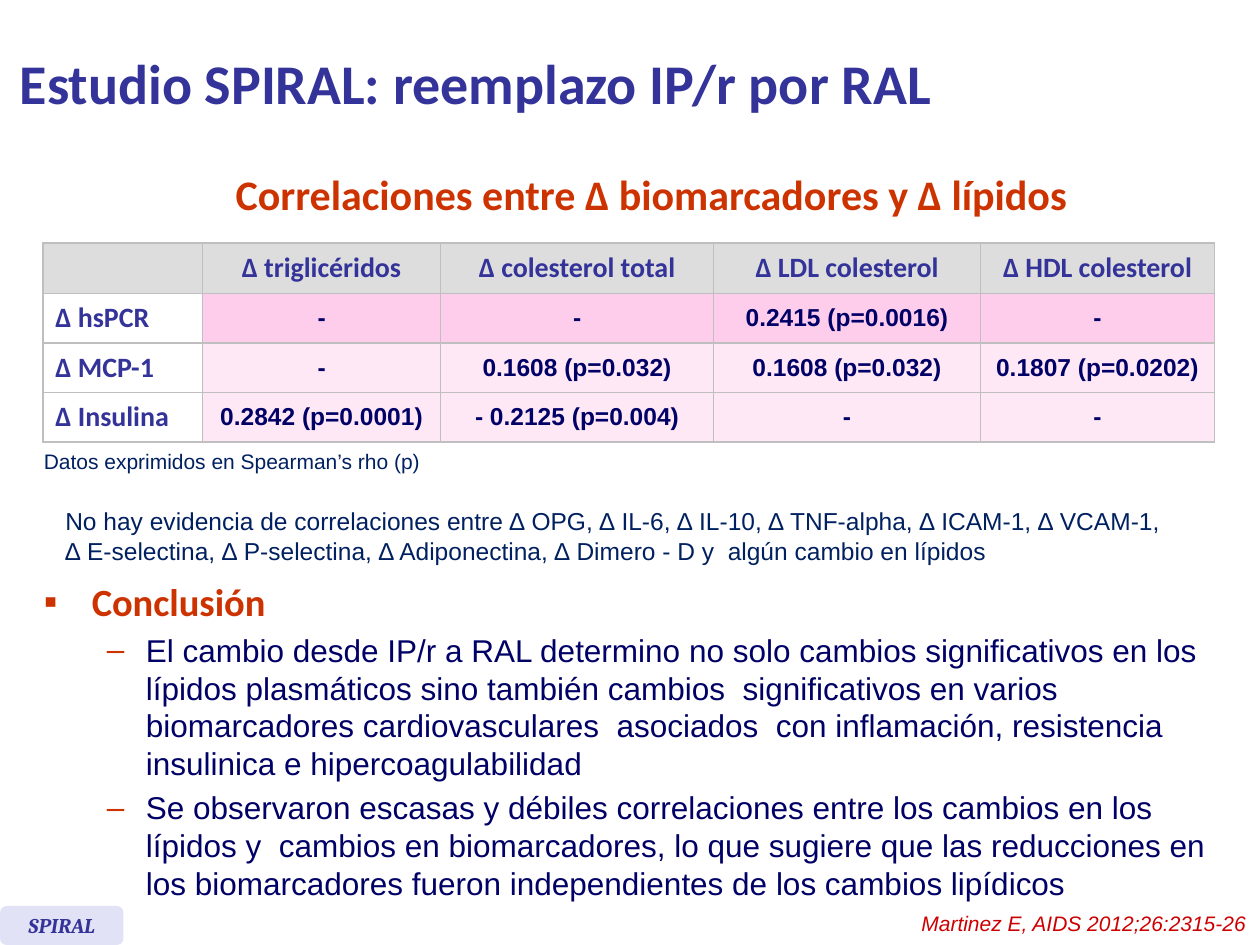
from lxml.etree import SubElement
from pptx import Presentation
from pptx.dml.color import RGBColor
from pptx.enum.shapes import MSO_SHAPE
from pptx.enum.text import MSO_ANCHOR, PP_ALIGN
from pptx.oxml.ns import qn
from pptx.util import Inches, Pt

INDIGO = RGBColor(0x33, 0x33, 0x99)
NAVY = RGBColor(0x00, 0x00, 0x66)
DEEP_BLUE = RGBColor(0x00, 0x20, 0x60)
RUST = RGBColor(0xCC, 0x33, 0x00)
RED = RGBColor(0xCC, 0x00, 0x00)
LAVENDER = RGBColor(0xE2, 0xE2, 0xF6)
GREY = RGBColor(0xDD, 0xDD, 0xDD)
BORDER_GREY = RGBColor(0xBF, 0xBF, 0xBF)
PINK = RGBColor(0xFF, 0xCD, 0xEC)
PALE_PINK = RGBColor(0xFF, 0xE8, 0xF6)

CORRELATIONS = [
    ["", "∆ triglicéridos", "∆ colesterol total", "∆ LDL colesterol", "∆ HDL colesterol"],
    ["∆ hsPCR", "-", "-", "0.2415 (p=0.0016)", "-"],
    ["∆ MCP-1", "-", "0.1608 (p=0.032)", "0.1608 (p=0.032)", "0.1807 (p=0.0202)"],
    ["∆ Insulina", "0.2842 (p=0.0001)", "- 0.2125 (p=0.004)", "-", "-"],
]
ROW_FILLS = [GREY, PINK, PALE_PINK, PALE_PINK]
COLUMN_SHARES = [1.27, 1.89, 2.17, 2.12, 1.86]
ROW_SHARES = [0.37, 0.39, 0.39, 0.39]
NO_EVIDENCE = [
    "No hay evidencia de correlaciones entre ∆ OPG, ∆ IL-6, ∆ IL-10, ∆ TNF-alpha, ∆ ICAM-1, ∆ VCAM-1,",
    "∆ E-selectina, ∆ P-selectina, ∆ Adiponectina, ∆ Dimero - D y  algún cambio en lípidos",
]
CONCLUSIONS = [
    "El cambio desde IP/r a RAL determino no solo cambios significativos en los lípidos "
    "plasmáticos sino también cambios  significativos en varios biomarcadores cardiovasculares  "
    "asociados  con inflamación, resistencia insulinica e hipercoagulabilidad",
    "Se observaron escasas y débiles correlaciones entre los cambios en los lípidos y  cambios "
    "en biomarcadores, lo que sugiere que las reducciones en los biomarcadores fueron "
    "independientes de los cambios lipídicos",
]


def style(paragraph, size, name, color, bold=False, italic=False, align=PP_ALIGN.LEFT):
    """Align a paragraph and format its runs."""
    paragraph.alignment = align
    for run in paragraph.runs:
        font = run.font
        font.size, font.name = Pt(size), name
        font.bold, font.italic = bold, italic
        font.color.rgb = color


def add_bullet(paragraph, mark, margin, hang):
    """Give a paragraph a rust bullet with a hanging indent."""
    properties = paragraph._p.get_or_add_pPr()
    properties.set("marL", str(Inches(margin)))
    properties.set("indent", str(-Inches(hang)))
    color = SubElement(properties, qn("a:buClr"))
    SubElement(color, qn("a:srgbClr"), val=str(RUST))
    SubElement(properties, qn("a:buFont"), typeface="Arial")
    SubElement(properties, qn("a:buChar"), char=mark)


def add_text(slide, box, lines, *look, anchor=MSO_ANCHOR.TOP, wrap=True, **options):
    """Add a text box whose lines share one look."""
    frame = slide.shapes.add_textbox(*map(Inches, box)).text_frame
    frame.word_wrap, frame.vertical_anchor = wrap, anchor
    frame.text = "\n".join(lines)
    for paragraph in frame.paragraphs:
        style(paragraph, *look, **options)


def place_title(slide, box):
    """Move and format the title placeholder."""
    title = slide.shapes.title
    title.left, title.top, title.width, title.height = map(Inches, box)
    title.text_frame.text = "Correlaciones entre ∆ biomarcadores y ∆ lípidos"
    title.text_frame.vertical_anchor = MSO_ANCHOR.MIDDLE
    style(title.text_frame.paragraphs[0], 24, "Calibri", RUST, bold=True, align=PP_ALIGN.CENTER)


def add_borders(cell):
    """Draw a thin grey line on each side of a cell."""
    properties = cell._tc.get_or_add_tcPr()
    for position, side in enumerate(("a:lnL", "a:lnR", "a:lnT", "a:lnB")):
        line = properties.makeelement(qn(side), {"w": str(Pt(1))})
        fill = SubElement(line, qn("a:solidFill"))
        SubElement(fill, qn("a:srgbClr"), val=str(BORDER_GREY))
        properties.insert(position, line)


def add_correlation_table(slide, box):
    """Add the table of correlations, sized to its box."""
    left, top, width, height = map(Inches, box)
    table = slide.shapes.add_table(
        len(CORRELATIONS), len(COLUMN_SHARES), left, top, width, height
    ).table
    for column, share in zip(table.columns, COLUMN_SHARES):
        column.width = int(width * share / sum(COLUMN_SHARES))
    for row, share in zip(table.rows, ROW_SHARES):
        row.height = int(height * share / sum(ROW_SHARES))
    for row_index, values in enumerate(CORRELATIONS):
        for column_index, value in enumerate(values):
            cell = table.cell(row_index, column_index)
            cell.text = value
            cell.vertical_anchor = MSO_ANCHOR.MIDDLE
            is_label = row_index > 0 and column_index == 0
            if is_label:
                cell.fill.background()
            else:
                cell.fill.solid()
                cell.fill.fore_color.rgb = ROW_FILLS[row_index]
            is_heading = is_label or row_index == 0
            look = (16, "Calibri", INDIGO) if is_heading else (14, "Arial", NAVY)
            align = PP_ALIGN.LEFT if is_label else PP_ALIGN.CENTER
            style(cell.text_frame.paragraphs[0], *look, bold=True, align=align)
            add_borders(cell)


def add_conclusion(slide, box):
    """Add the conclusion heading and its dashed points."""
    frame = slide.shapes.add_textbox(*map(Inches, box)).text_frame
    frame.word_wrap = True
    frame.text = "\n".join(["Conclusión", *CONCLUSIONS])
    heading, *points = frame.paragraphs
    add_bullet(heading, "▪", 0.38, 0.38)
    style(heading, 22, "Calibri", RUST, bold=True)
    for point in points:
        point.level = 1
        add_bullet(point, "–", 0.81, 0.31)
        point.space_before = Pt(3.6)
        style(point, 18, "Arial", NAVY)


def add_study_tag(slide, box):
    """Add the rounded tag with the study name."""
    tag = slide.shapes.add_shape(MSO_SHAPE.ROUNDED_RECTANGLE, *map(Inches, box))
    tag.shadow.inherit = False
    tag.fill.solid()
    tag.fill.fore_color.rgb = LAVENDER
    tag.line.fill.background()
    frame = tag.text_frame
    frame.word_wrap, frame.vertical_anchor = False, MSO_ANCHOR.MIDDLE
    frame.text = "SPIRAL"
    style(frame.paragraphs[0], 12, "Cambria", INDIGO, True, True, PP_ALIGN.CENTER)


def build_slide(presentation):
    """Lay out the regions of the slide."""
    slide = presentation.slides.add_slide(presentation.slide_layouts[5])
    place_title(slide, (0.69, 1.15, 8.96, 0.78))
    add_text(slide, (0.42, 3.97, 9.3, 0.57), NO_EVIDENCE, 14, "Arial", DEEP_BLUE)
    add_conclusion(slide, (0.25, 4.54, 9.58, 2.81))
    add_text(slide, (0.06, 0.05, 8.96, 1.21), ["Estudio SPIRAL: reemplazo IP/r por RAL"],
             32, "Calibri", INDIGO, bold=True, anchor=MSO_ANCHOR.MIDDLE)
    add_study_tag(slide, (0, 7.19, 0.98, 0.31))
    add_correlation_table(slide, (0.34, 1.93, 9.3, 1.55))
    add_text(slide, (0.25, 3.51, 3.26, 0.3), ["Datos exprimidos en Spearman’s rho (p)"],
             12, "Arial", DEEP_BLUE, wrap=False)
    add_text(slide, (6.49, 7.18, 3.5, 0.3), ["Martinez E, AIDS 2012;26:2315-26"],
             12, "Arial", RED, italic=True, align=PP_ALIGN.RIGHT)


def main():
    """Build and save the presentation."""
    presentation = Presentation()
    presentation.slide_width, presentation.slide_height = Inches(10), Inches(7.5)
    build_slide(presentation)
    presentation.save("out.pptx")


if __name__ == "__main__":
    main()
